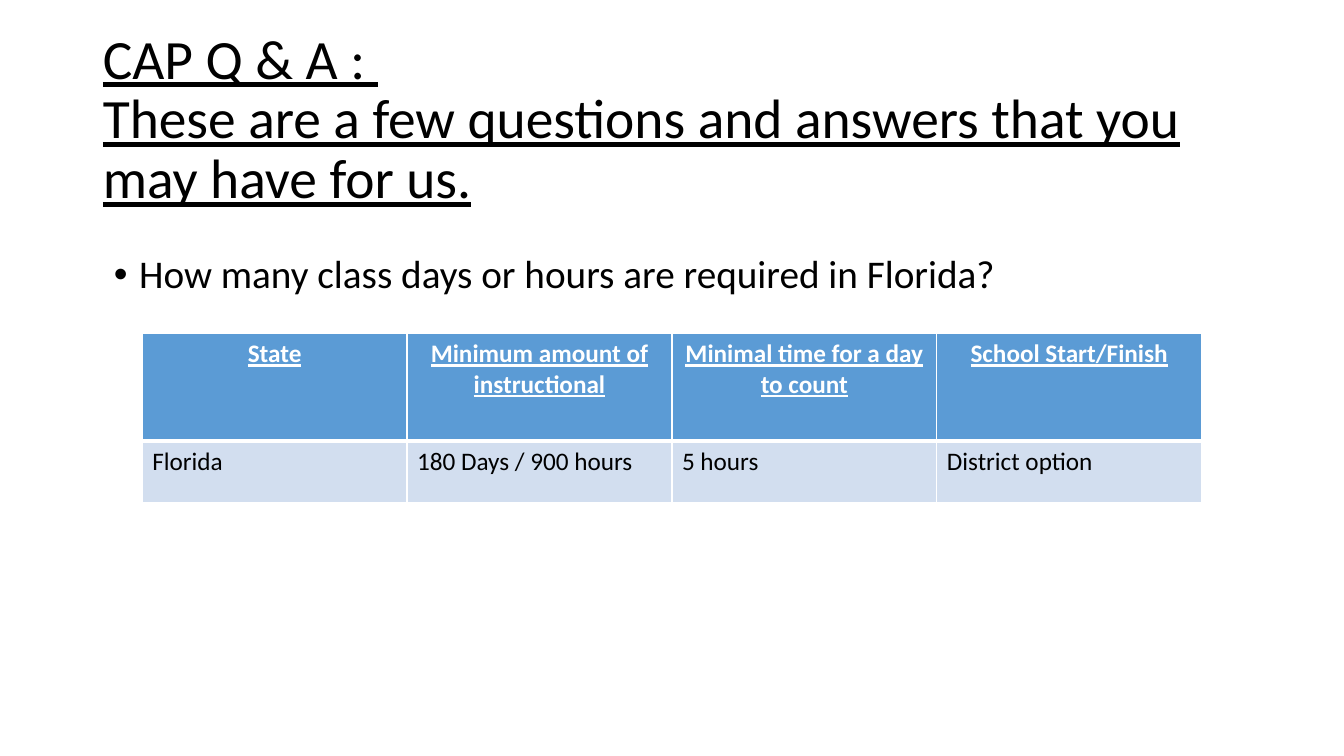
import dataclasses

import lxml.etree
import pptx
import pptx.dml.color
import pptx.enum.text
import pptx.oxml.ns
import pptx.util

ALIGN = pptx.enum.text.PP_ALIGN
ANCHOR = pptx.enum.text.MSO_ANCHOR


@dataclasses.dataclass(frozen=True)
class Theme:
    font: str = "Calibri"
    ink: str = "000000"
    paper: str = "FFFFFF"
    header_fill: str = "5B9BD5"
    row_fill: str = "D2DEEF"
    title_size: float = 39.6
    question_size: float = 28
    table_size: float = 18
    rule: float = 1
    header_rule: float = 3


def rgb(value):
    return pptx.dml.color.RGBColor.from_string(value)


def add_element(parent, tag, **attributes):
    return lxml.etree.SubElement(parent, pptx.oxml.ns.qn(tag), attributes)


def write(frame, text, *, font, size, color, bold=False, underline=False,
          align=ALIGN.LEFT, spacing=1.0, bullet=None, indent=0.25):
    paragraph = frame.paragraphs[0]
    paragraph.text = text
    paragraph.alignment = align
    paragraph.line_spacing = spacing
    paragraph.space_before = pptx.util.Pt(0)
    if bullet:
        properties = paragraph._p.get_or_add_pPr()
        hang = pptx.util.Inches(indent)
        properties.set("marL", str(hang))
        properties.set("indent", str(-hang))
        add_element(properties, "a:buFont", typeface="Arial")
        add_element(properties, "a:buChar", char=bullet)
    for run in paragraph.runs:
        run.font.name = font
        run.font.size = pptx.util.Pt(size)
        run.font.color.rgb = rgb(color)
        run.font.bold = bold
        run.font.underline = underline


class SlideBuilder:
    """Places styled elements on one slide using a 100 by 100 grid."""

    def __init__(self, presentation, theme):
        self.theme = theme
        self.column = presentation.slide_width / 100
        self.row = presentation.slide_height / 100
        self.slide = presentation.slides.add_slide(presentation.slide_layouts[1])

    def box(self, left, top, width, height):
        return (round(left * self.column), round(top * self.row),
                round(width * self.column), round(height * self.row))

    def placeholder(self, index, text, area, anchor, **style):
        holder = self.slide.placeholders[index]
        holder.left, holder.top, holder.width, holder.height = self.box(*area)
        frame = holder.text_frame
        frame.word_wrap = True
        frame.auto_size = pptx.enum.text.MSO_AUTO_SIZE.NONE
        frame.vertical_anchor = anchor
        write(frame, text, font=self.theme.font, color=self.theme.ink,
              spacing=0.9, **style)

    def title(self, text, area):
        self.placeholder(0, text, area, ANCHOR.MIDDLE,
                         size=self.theme.title_size, underline=True)

    def question(self, text, area):
        self.placeholder(1, text, area, ANCHOR.TOP,
                         size=self.theme.question_size, bullet="•")

    def borders(self, cell, **widths):
        properties = cell._tc.get_or_add_tcPr()
        for side in "LRTB":
            width = pptx.util.Pt(widths.get(side, self.theme.rule))
            line = add_element(properties, f"a:ln{side}", w=str(width))
            fill = add_element(line, "a:solidFill")
            add_element(fill, "a:srgbClr", val=self.theme.paper)

    def table(self, records, left, top, width, heights):
        area = self.box(left, top, width, sum(heights))
        graphic = self.slide.shapes.add_table(len(records), len(records[0]), *area)
        self.slide.shapes.title.element.addnext(graphic.element)
        theme = self.theme
        for number, (record, height) in enumerate(zip(records, heights)):
            graphic.table.rows[number].height = round(height * self.row)
            header = number == 0
            heavy_side = "B" if header else "T"
            for position, text in enumerate(record):
                cell = graphic.table.cell(number, position)
                self.borders(cell, **{heavy_side: theme.header_rule})
                cell.fill.solid()
                cell.fill.fore_color.rgb = rgb(theme.header_fill if header else theme.row_fill)
                write(cell.text_frame, text, font=theme.font, size=theme.table_size,
                      color=theme.paper if header else theme.ink,
                      bold=header, underline=header,
                      align=ALIGN.CENTER if header else ALIGN.LEFT)


def main():
    presentation = pptx.Presentation()
    presentation.slide_width = pptx.util.Inches(13.33)
    presentation.slide_height = pptx.util.Inches(7.5)
    builder = SlideBuilder(presentation, Theme())
    builder.title("CAP Q & A : \vThese are a few questions and answers that you may have for us.",
                  (6.9, 5.33, 86.25, 21.33))
    builder.question("How many class days or hours are required in Florida?",
                     (7.73, 33.07, 86.25, 22))
    requirements = [
        ["State", "Minimum amount of instructional",
         "Minimal time for a day to count", "School Start/Finish"],
        ["Florida", "180 Days / 900 hours", "5 hours", "District option"],
    ]
    builder.table(requirements, 10.58, 44.13, 78.84, (14.2, 8.2))
    presentation.save("out.pptx")


if __name__ == "__main__":
    main()
